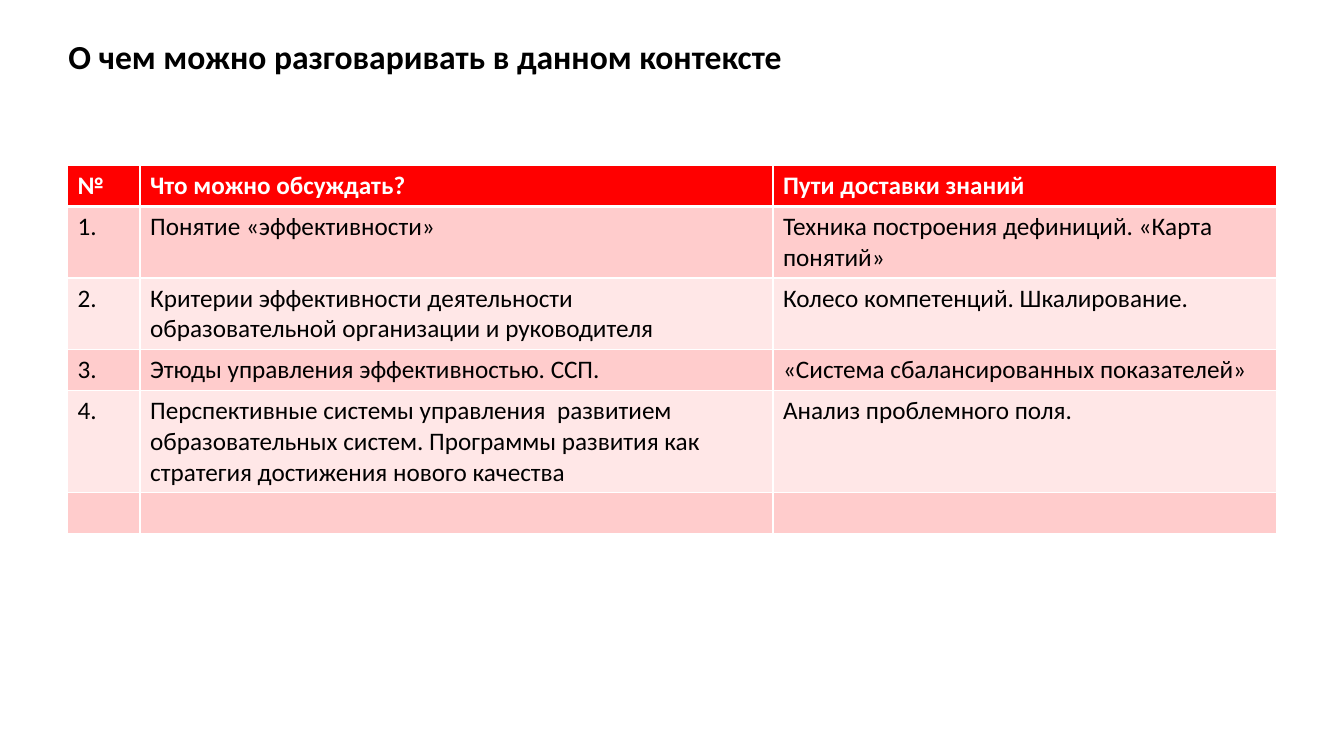
from pptx import Presentation
from pptx.dml.color import RGBColor
from pptx.enum.text import MSO_ANCHOR as Anchor, PP_ALIGN as Align
from pptx.oxml import parse_xml
from pptx.oxml.ns import nsdecls
from pptx.util import Cm, Pt

TITLE = "О чем можно разговаривать в данном контексте"
ROWS = [
    ("№", "Что можно обсуждать?", "Пути доставки знаний"),
    ("1.", "Понятие «эффективности»",
     "Техника построения дефиниций. «Карта понятий»"),
    ("2.", "Критерии эффективности деятельности образовательной "
     "организации и руководителя", "Колесо компетенций. Шкалирование."),
    ("3.", "Этюды управления эффективностью. ССП.",
     "«Система сбалансированных показателей»"),
    ("4.", "Перспективные системы управления  развитием образовательных "
     "систем. Программы развития как стратегия достижения нового качества",
     "Анализ проблемного поля."),
    ("", "", ""),
]
WIDTHS = (1.83, 15.95, 12.7)
ROW_H = 1.03


def color(code):
    return RGBColor.from_string(code)


def write(frame, text, size=18, tint="000000", bold=False, font="Calibri"):
    frame.word_wrap = True
    par = frame.paragraphs[0]
    par.alignment = Align.LEFT
    par.font.size = Pt(size)
    if text:
        run = par.add_run()
        run.text = text
        run.font.name = font
        run.font.size = Pt(size)
        run.font.bold = bold
        run.font.color.rgb = color(tint)


class Deck:
    black = "000000"
    white = "FFFFFF"
    red = "FF0000"
    bands = ("FFCCCC", "FFE7E7")

    def __init__(self):
        self.show = Presentation()
        self.show.slide_width = Cm(33.87)
        self.show.slide_height = Cm(19.05)
        self.slide = self.show.slides.add_slide(self.show.slide_layouts[5])

    def title(self, text, left, top, width, height):
        box = self.slide.shapes.title
        box.left, box.top = Cm(left), Cm(top)
        box.width, box.height = Cm(width), Cm(height)
        box.text_frame.vertical_anchor = Anchor.MIDDLE
        write(box.text_frame, text, size=24, tint=self.black, bold=True)

    def edges(self, cell, **sizes):
        props = cell._tc.get_or_add_tcPr()
        for spot, side in enumerate("LRTB"):
            width = Pt(sizes.get(side, 1))
            props.insert(spot, parse_xml(
                f'<a:ln{side} {nsdecls("a")} w="{width}"><a:solidFill>'
                f'<a:srgbClr val="{self.white}"/></a:solidFill></a:ln{side}>'))

    def table(self, rows, widths, left, top, row_h):
        frame = self.slide.shapes.add_table(
            len(rows), len(widths), Cm(left), Cm(top),
            Cm(sum(widths)), Cm(row_h * len(rows)))
        grid = frame.table
        for col, width in zip(grid.columns, widths):
            col.width = Cm(width)
        for r, texts in enumerate(rows):
            grid.rows[r].height = Cm(row_h)
            head = r == 0
            fill = self.red if head else self.bands[(r - 1) % 2]
            tint = self.white if head else self.black
            for c, text in enumerate(texts):
                cell = grid.cell(r, c)
                cell.fill.solid()
                cell.fill.fore_color.rgb = color(fill)
                self.edges(cell, T=3 if r == 1 else 1, B=3 if head else 1)
                write(cell.text_frame, text, tint=tint, bold=head)


def main():
    deck = Deck()
    deck.title(TITLE, 1.47, 0.51, 30.48, 1.8)
    deck.table(ROWS, WIDTHS, 1.7, 4.17, ROW_H)
    deck.show.save("out.pptx")


if __name__ == "__main__":
    main()
